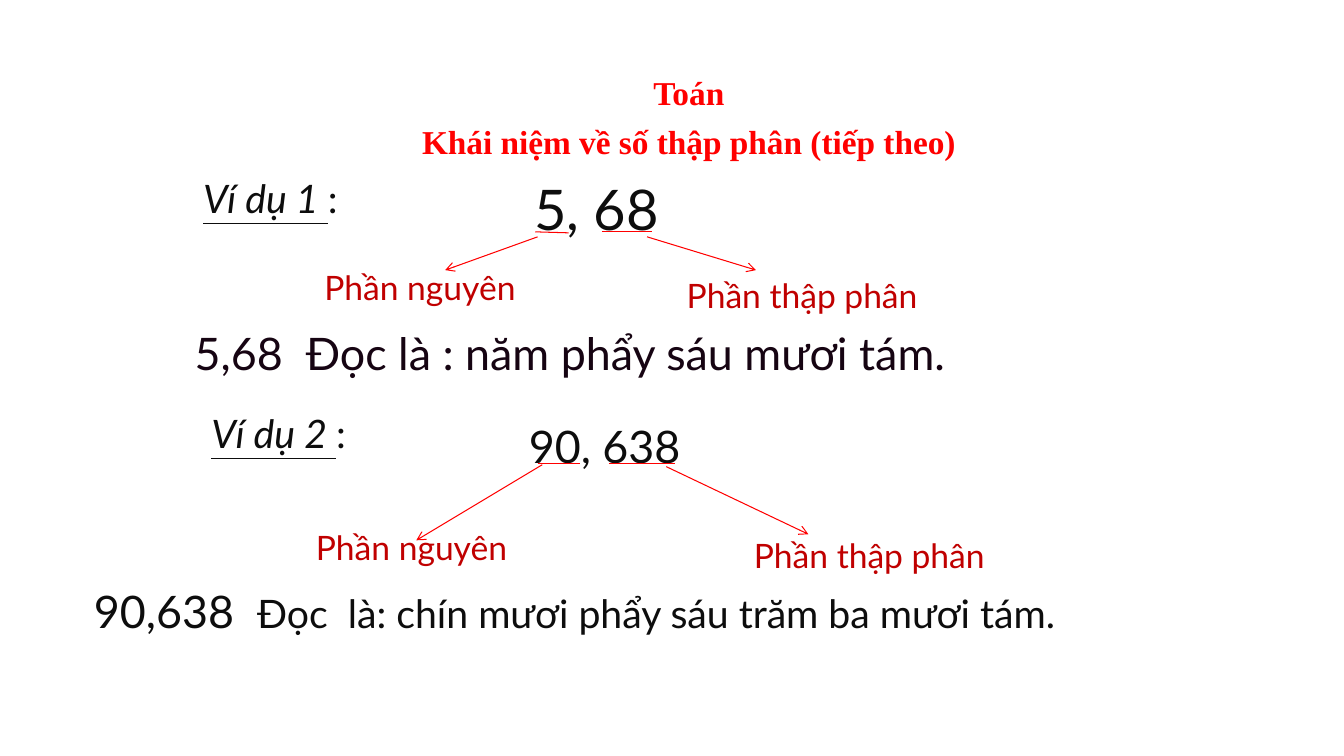
from dataclasses import dataclass
from pptx import Presentation
from pptx import util as u
from pptx.dml.color import RGBColor
from pptx.enum import shapes, text
from pptx.oxml import parse_xml
from pptx.oxml.ns import nsdecls


@dataclass(frozen=True)
class Theme:
    body: str = "Lato"
    serif: str = "Times New Roman"
    ink: str = "0D0D0D"
    plum: str = "160412"
    brick: str = "C00000"
    red: str = "FF0000"
    head: float = 23.8
    small: int = 24
    mid: int = 28
    large: int = 32
    huge: int = 40
    rule: float = 0.75


T = Theme()
COLS, ROWS = 160, 100
TITLE = ["Toán", "Khái niệm về số thập phân (tiếp theo)"]
TITLE_BOX = (28.5, 8.93, 107, 11.07)
WHOLE, DECIMAL = "Phần nguyên", "Phần thập phân"

# Boxes are left, top, width, height; lines are x1, y1, x2, y2 (columns, rows)
EXAMPLES = [
    {
        "name": ("Ví dụ 1 ", (23, 22.4, 22, 10)),
        "number": ("5, 68", T.huge, (59, 22.4, 24, 10.27)),
        "labels": [(WHOLE, (34, 34.67, 32, 6.67)),
                   (DECIMAL, (74, 35.73, 43, 6.67))],
        "rules": [(63.72, 30.67, 67.68, 30.8), (71.64, 30.67, 77.64, 30.67)],
        "arrows": [(64, 31.33, 53, 35.73), (77.04, 31.33, 90, 35.73)],
        "words": [("5,68  Đọc là : năm phẩy sáu mươi tám.", T.large)],
        "tint": T.plum,
        "place": (22, 42.4, 118, 7.73),
    },
    {
        "name": ("Ví dụ 2 ", (24, 53.47, 22, 10)),
        "number": ("90, 638", T.large, (56, 54.67, 32, 8.53)),
        "labels": [(WHOLE, (33, 69.07, 32, 6.67)),
                   (DECIMAL, (82, 70.13, 43, 6.67))],
        "rules": [(64, 61.33, 69, 61.33), (72.48, 61.33, 80.4, 61.33)],
        "arrows": [(64.56, 61.47, 49.56, 71.47), (79.32, 61.73, 96.24, 70.67)],
        "words": [("90,638  ", T.large),
                  ("Đọc  là: chín mươi phẩy sáu trăm ba mươi tám.", T.mid)],
        "tint": T.ink,
        "place": (10, 76.53, 130, 7.73),
    },
]

deck = Presentation()
deck.slide_width, deck.slide_height = u.Inches(13.33), u.Inches(7.5)
slide = deck.slides.add_slide(deck.slide_layouts[5])


def scale(spot):
    """Turn column and row pairs into slide lengths."""
    units = (deck.slide_width / COLS, deck.slide_height / ROWS)
    return [round(n * units[i % 2]) for i, n in enumerate(spot)]


def style(para, size, tint, face=T.body, center=False):
    para.font.size, para.font.name = u.Pt(size), face
    para.font.color.rgb = RGBColor.from_string(tint)
    para.alignment = text.PP_ALIGN.CENTER if center else text.PP_ALIGN.LEFT


def write(box, runs, size, tint, center=False):
    """Add a text box and return its runs."""
    frame = slide.shapes.add_textbox(*scale(box)).text_frame
    frame.word_wrap = True
    para = frame.paragraphs[0]
    style(para, size, tint, center=center)
    for words in runs:
        para.add_run().text = words
    return para.runs


def draw(ends, arrow=False):
    line = slide.shapes.add_connector(shapes.MSO_CONNECTOR.STRAIGHT, *scale(ends))
    line.line.color.rgb = RGBColor.from_string(T.red)
    line.line.width = u.Pt(T.rule)
    props = line._element.spPr
    if arrow:
        props.ln.append(parse_xml(f'<a:tailEnd {nsdecls("a")} type="arrow"/>'))
    props.append(parse_xml(f'<a:effectLst {nsdecls("a")}/>'))


def head():
    title = slide.shapes.title
    title.left, title.top, title.width, title.height = scale(TITLE_BOX)
    frame = title.text_frame
    frame.text = "\n".join(TITLE)
    frame.word_wrap = True
    frame.auto_size = text.MSO_AUTO_SIZE.NONE
    frame.vertical_anchor = text.MSO_ANCHOR.TOP
    for para in frame.paragraphs:
        style(para, T.head, T.red, T.serif, center=True)
        para.font.bold = True
        para.space_before = u.Pt(6)


def show(case):
    name, box = case["name"]
    lead = write(box, [name, ":"], T.mid, T.ink)[0]
    lead.font.italic = lead.font.underline = True
    number, size, box = case["number"]
    write(box, [number], size, T.ink, center=True)
    for label, box in case["labels"]:
        write(box, [label], T.small, T.brick, center=True)
    for ends in case["rules"]:
        draw(ends)
    for ends in case["arrows"]:
        draw(ends, arrow=True)
    words, sizes = zip(*case["words"])
    for run, size in zip(write(case["place"], words, sizes[0], case["tint"]), sizes):
        if size != sizes[0]:
            run.font.size = u.Pt(size)


head()
for case in EXAMPLES:
    show(case)
deck.save("out.pptx")
